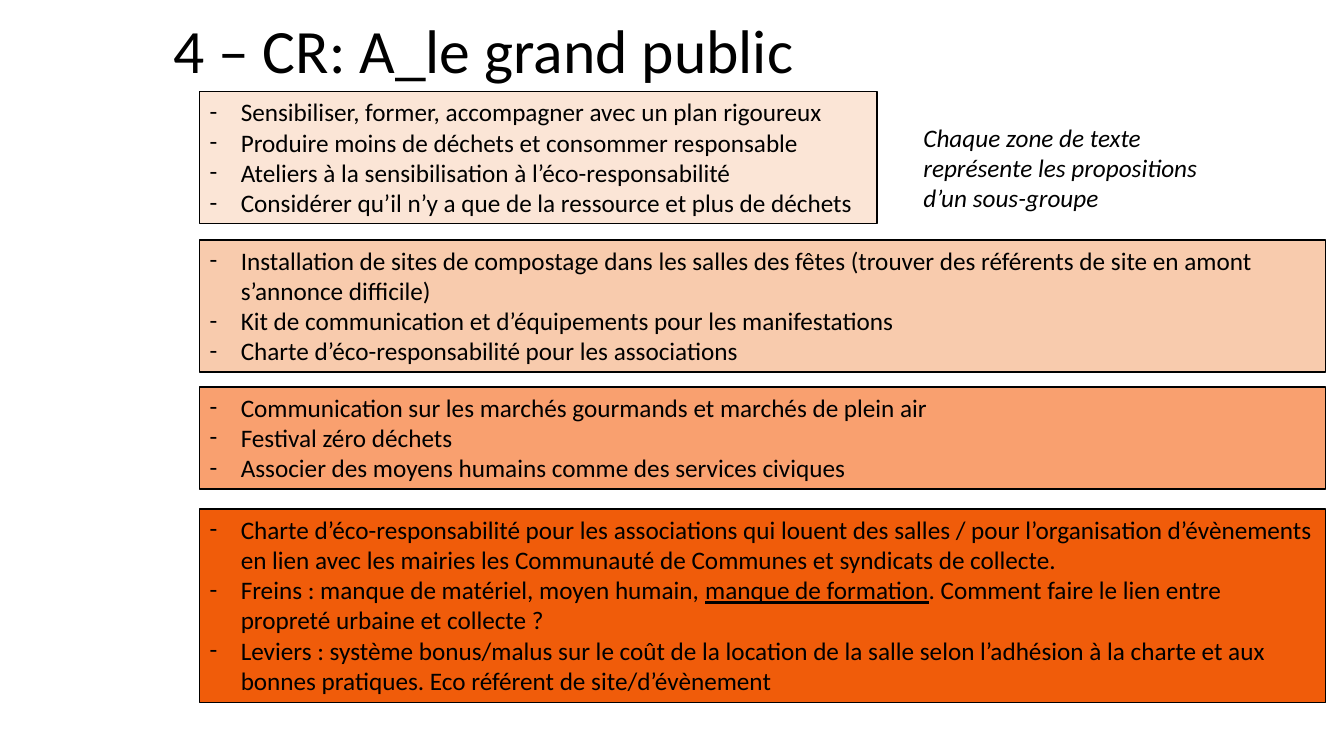
from pptx import Presentation
from pptx.dml.color import RGBColor
from pptx.enum.shapes import MSO_SHAPE
from pptx.enum.text import MSO_ANCHOR, PP_ALIGN
from pptx.oxml.ns import qn
from pptx.util import Inches, Pt
from lxml.etree import SubElement

COLORS = {
    "text": "000000",
    "public": "FBE5D6",
    "compost": "F8CBAD",
    "markets": "F9A06F",
    "charter": "F05C0A",
}
UNDERLINED = "manque de formation"

groups = [
    ("public", 0.91, 6.72, 1.31, [
        ["Sensibiliser, former, accompagner avec un plan rigoureux"],
        ["Produire moins de déchets et consommer responsable"],
        ["Ateliers à la sensibilisation à l’éco-responsabilité"],
        ["Considérer qu’il n’y a que de la ressource et plus de déchets"],
    ]),
    ("compost", 2.38, 11.17, 1.31, [
        ["Installation de sites de compostage dans les salles des fêtes "
         "(trouver des référents de site en amont s’annonce difficile)"],
        ["Kit de communication et d’équipements pour les manifestations"],
        ["Charte d’éco-responsabilité pour les associations"],
    ]),
    ("markets", 3.84, 11.17, 1.01, [
        ["Communication sur les marchés gourmands et marchés de plein air"],
        ["Festival zéro déchets"],
        ["Associer des moyens humains comme des services civiques"],
    ]),
    ("charter", 5.05, 11.17, 1.92, [
        ["Charte d’éco-responsabilité pour les associations qui louent des salles / "
         "pour l’organisation d’évènements en lien avec les mairies "
         "les Communauté de Communes et syndicats de collecte."],
        ["Freins : manque de matériel, moyen humain, ", UNDERLINED,
         ". Comment faire le lien entre propreté urbaine et collecte ?"],
        ["Leviers : système bonus/malus sur le coût de la location de la salle "
         "selon l’adhésion à la charte et aux bonnes pratiques. "
         "Eco référent de site/d’évènement"],
    ]),
]

captions = [
    ("4 – CR: A_le grand public", 1.62, 0.07, 9.92, 0.84, 44, False),
    ("Chaque zone de texte représente les propositions d’un sous-groupe",
     9.06, 1.16, 3.22, 1.01, 18, True),
]


def add_run(paragraph, text, size):
    run = paragraph.add_run()
    run.text = text
    run.font.name = "Calibri"
    run.font.size = Pt(size)
    run.font.color.rgb = RGBColor.from_string(COLORS["text"])
    return run


deck = Presentation()
deck.slide_width, deck.slide_height = Inches(13.33), Inches(7.5)
slide = deck.slides.add_slide(deck.slide_layouts[6])

for caption, left, top, width, height, size, italic in captions:
    box = slide.shapes.add_textbox(Inches(left), Inches(top), Inches(width), Inches(height))
    box.text_frame.word_wrap = True
    add_run(box.text_frame.paragraphs[0], caption, size).font.italic = italic

for group, top, width, height, proposals in groups:
    zone = slide.shapes.add_shape(
        MSO_SHAPE.RECTANGLE, Inches(1.98), Inches(top), Inches(width), Inches(height))
    zone.shadow.inherit = False
    zone.fill.solid()
    zone.fill.fore_color.rgb = RGBColor.from_string(COLORS[group])
    zone.line.color.rgb = RGBColor.from_string(COLORS["text"])
    zone.line.width = Pt(1)
    frame = zone.text_frame
    frame.word_wrap = True
    frame.vertical_anchor = MSO_ANCHOR.TOP
    for index, proposal in enumerate(proposals):
        paragraph = frame.add_paragraph() if index else frame.paragraphs[0]
        paragraph.alignment = PP_ALIGN.LEFT
        properties = paragraph._p.get_or_add_pPr()
        properties.set("marL", str(Inches(0.31)))
        properties.set("indent", str(-Inches(0.31)))
        SubElement(properties, qn("a:buFont"), typeface="Calibri")
        SubElement(properties, qn("a:buChar"), char="-")
        for text in proposal:
            run = add_run(paragraph, text, 18)
            if text == UNDERLINED:
                run.font.underline = True

deck.save("out.pptx")
